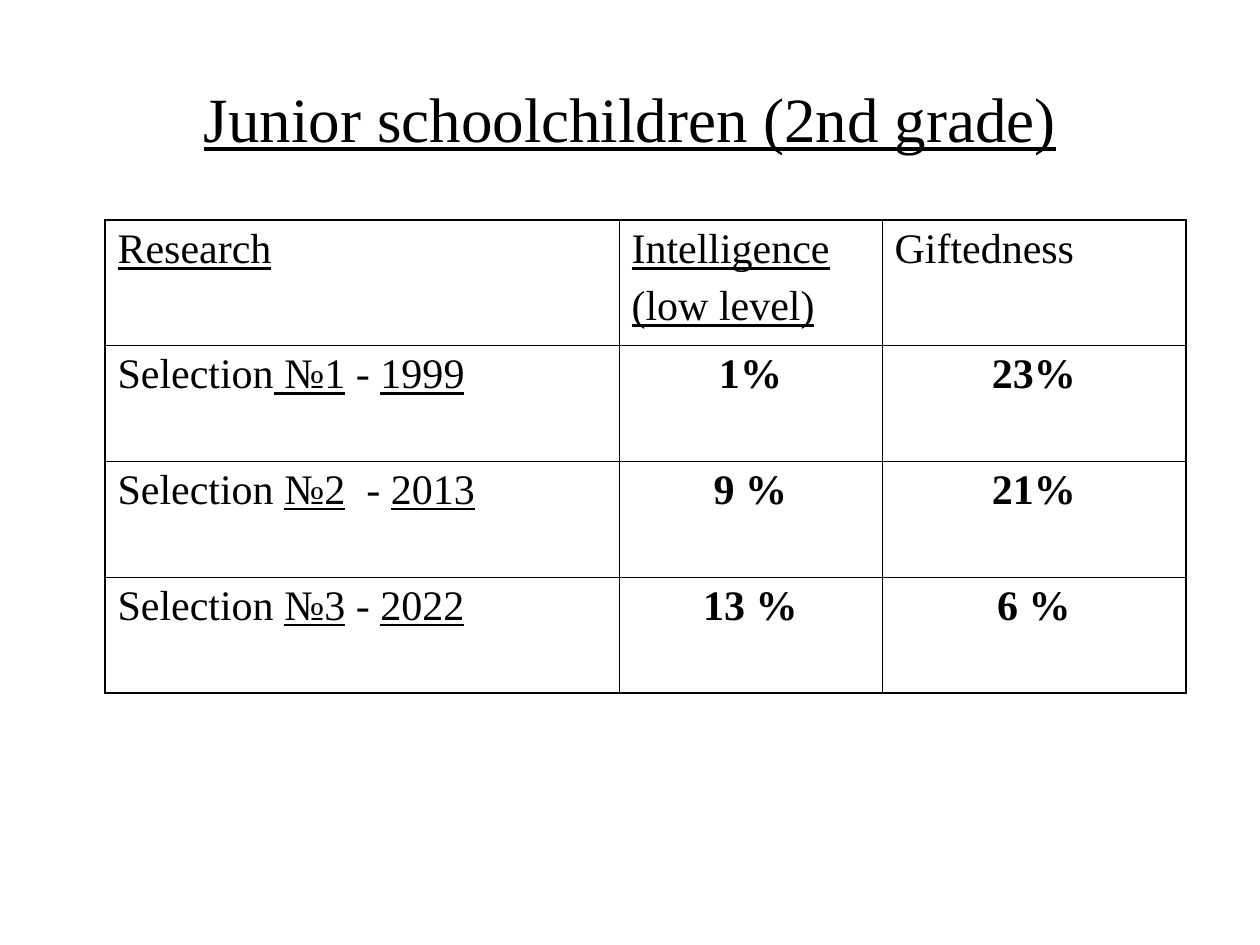
from lxml import etree
from pptx import Presentation
from pptx.dml.color import RGBColor
from pptx.enum.text import MSO_ANCHOR, PP_ALIGN
from pptx.oxml.ns import qn
from pptx.util import Emu, Pt

LEFT, CENTER = PP_ALIGN.LEFT, PP_ALIGN.CENTER
TOP, MIDDLE = MSO_ANCHOR.TOP, MSO_ANCHOR.MIDDLE
BLACK = RGBColor(0x00, 0x00, 0x00)
FONT = "Times New Roman"
PX_PER_INCH = 126
OUTER, INNER = Pt(1.08), Pt(0.45)


def px(n):
    return Emu(round(n * 914400 / PX_PER_INCH))


class SlideBuilder:
    """Holds the text style and the current slide."""

    style = {"name": FONT, "size": Pt(24), "bold": False, "underline": False}

    def __init__(self, prs):
        self.s = prs.slides.add_slide(prs.slide_layouts[6])

    def paragraph(self, p, runs, align=LEFT, before=0, **formats):
        p.alignment = align
        p.space_before = Pt(before)
        for text, underline in runs:
            r = p.add_run()
            r.text = text
            values = {**self.style, **formats, "underline": underline}
            for name, value in values.items():
                setattr(r.font, name, value)
            r.font.color.rgb = BLACK

    def title(self, x, y, w, h, text):
        tf = self.s.shapes.add_textbox(px(x), px(y), px(w), px(h)).text_frame
        tf.word_wrap = True
        tf.vertical_anchor = MIDDLE
        self.paragraph(tf.paragraphs[0], [(text, True)], CENTER, size=Pt(36))

    def border(self, cell, side, width):
        tcPr = cell._tc.get_or_add_tcPr()
        ln = etree.SubElement(tcPr, qn("a:ln" + side), w=str(int(width)))
        fill = etree.SubElement(ln, qn("a:solidFill"))
        etree.SubElement(fill, qn("a:srgbClr"), val=str(BLACK))

    def cell(self, cell, paragraphs, edges, **formats):
        cell.vertical_anchor = TOP
        cell.margin_left = cell.margin_right = Pt(7.2)
        cell.margin_top = cell.margin_bottom = Pt(3.6)
        for side, is_outer in edges.items():
            self.border(cell, side, OUTER if is_outer else INNER)
        cell.fill.background()
        tf = cell.text_frame
        for i, runs in enumerate(paragraphs):
            p = tf.add_paragraph() if i else tf.paragraphs[0]
            self.paragraph(p, runs, before=6, **formats)

    def table(self, x, y, widths, heights, rows):
        shape = self.s.shapes.add_table(
            len(heights), len(widths), px(x), px(y),
            px(sum(widths)), px(sum(heights)))
        table = shape.table
        table.first_row = table.horz_banding = False
        for column, width in zip(table.columns, widths):
            column.width = px(width)
        for row, height in zip(table.rows, heights):
            row.height = px(height)
        last_row, last_col = len(heights) - 1, len(widths) - 1
        for i, row in enumerate(rows):
            for j, paragraphs in enumerate(row):
                edges = {"L": j == 0, "R": j == last_col,
                         "T": i == 0, "B": i == last_row}
                is_value = i > 0 and j > 0
                self.cell(table.cell(i, j), paragraphs, edges, bold=is_value,
                          align=CENTER if is_value else LEFT)


# Each run is (text, underlined); each cell is a list of paragraphs
HEADER = [
    [[("Research", True)]],
    [[("Intelligence", True)], [("(low level)", True)]],
    [[("Giftedness", False)]],
]
SELECTIONS = [
    ("Selection", " №1", " - ", "1999", "1%", "23%"),
    ("Selection ", "№2", "  - ", "2013", "9 %", "21%"),
    ("Selection ", "№3", " - ", "2022", "13 %", "6 %"),
]


def selection_row(label, number, dash, year, intelligence, giftedness):
    name = [(label, False), (number, True), (dash, False), (year, True)]
    return [[name], [[(intelligence, False)]], [[(giftedness, False)]]]


def main():
    prs = Presentation()
    prs.slide_width, prs.slide_height = px(1260), px(945)
    slide = SlideBuilder(prs)

    # Title
    slide.title(63, 38, 1134, 158, "Junior schoolchildren (2nd grade)")

    # Results table
    rows = [HEADER] + [selection_row(*values) for values in SELECTIONS]
    slide.table(105, 220, [514, 263, 304], [125] + [116] * 3, rows)

    prs.save("out.pptx")


if __name__ == "__main__":
    main()
